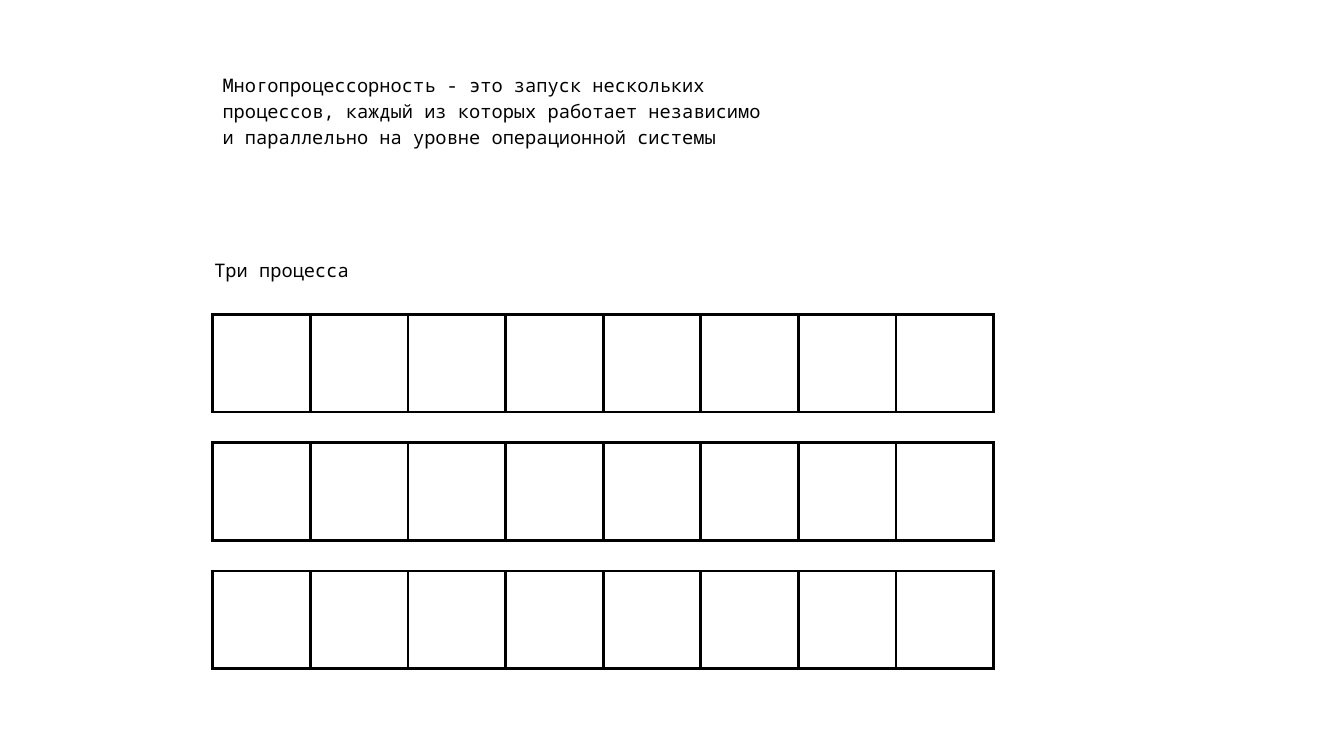
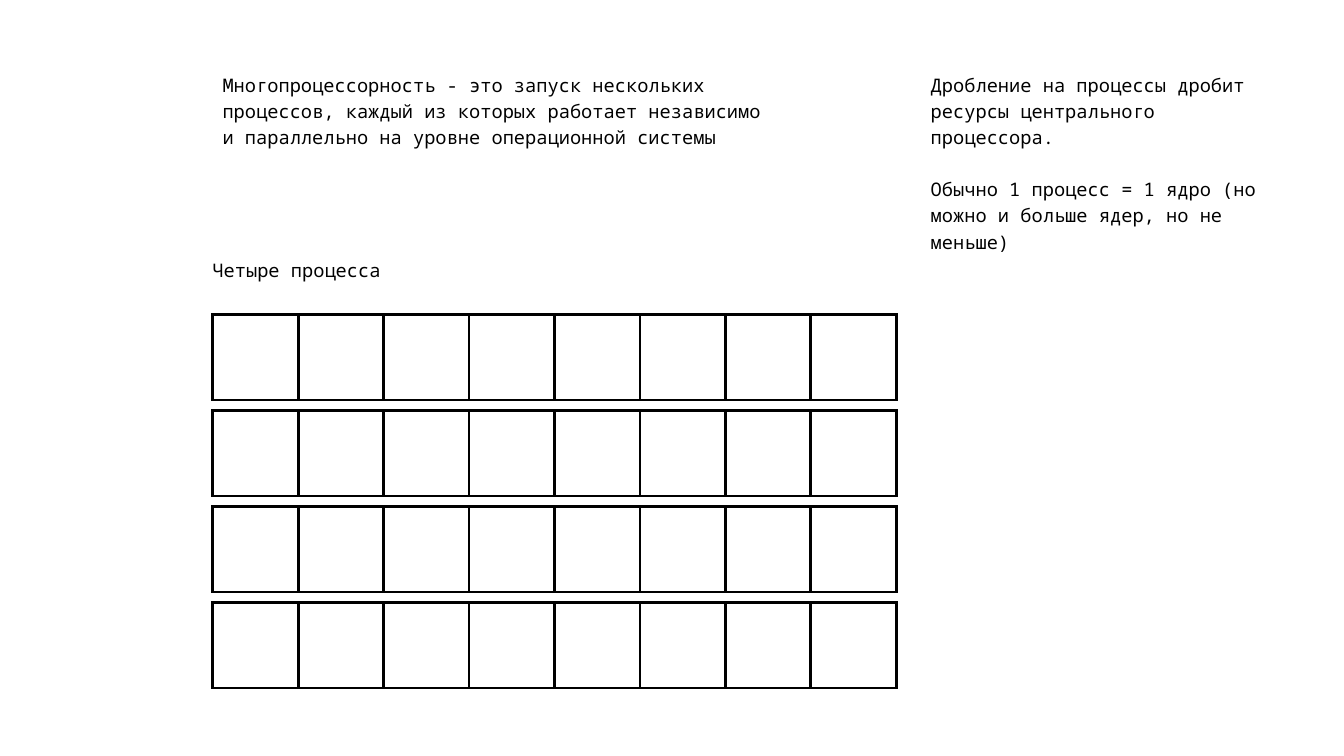
from dataclasses import dataclass
from itertools import product
from typing import Any

from lxml.etree import SubElement
from pptx import Presentation
from pptx.dml.color import RGBColor
from pptx.enum.shapes import MSO_SHAPE
from pptx.enum.text import MSO_ANCHOR, MSO_AUTO_SIZE, PP_ALIGN
from pptx.oxml.ns import qn
from pptx.util import Cm, Pt

BLACK = RGBColor(0x00, 0x00, 0x00)
WHITE = RGBColor(0xFF, 0xFF, 0xFF)

TITLE_ONLY_LAYOUT = 5
CELLS_PER_PROCESS = 8
GRID_LEFT, GRID_TOP = 8.04, 11.89
LINE_HEIGHT = Pt(28)

FRAME_FORMAT = {
    "margin_left": 0,
    "margin_top": 0,
    "margin_right": 0,
    "margin_bottom": 0,
    "word_wrap": True,
    "vertical_anchor": MSO_ANCHOR.TOP,
    "auto_size": MSO_AUTO_SIZE.SHAPE_TO_FIT_TEXT,
}
PARAGRAPH_FORMAT = {"line_spacing": LINE_HEIGHT, "alignment": PP_ALIGN.LEFT}
FONT_FORMAT = {"name": "Noto Sans Mono", "size": Pt(20), "bold": False}


@dataclass(frozen=True)
class TextBlock:
    """Paragraphs and their place in centimetres."""
    left: float
    top: float
    width: float
    height: float
    paragraphs: tuple[str, ...]


@dataclass(frozen=True)
class ProcessGrid:
    """One row of square cells per process, in centimetres."""
    processes: int
    side: float
    row_step: float


@dataclass(frozen=True)
class ProcessSlide:
    grid: ProcessGrid
    texts: tuple[TextBlock, ...]


DEFINITION = TextBlock(8.41, 2.64, 20.37, 3, (
    "Многопроцессорность - это запуск нескольких процессов, каждый из "
    "которых работает независимо и параллельно на уровне операционной системы",
))

SLIDES = (
    ProcessSlide(
        ProcessGrid(processes=3, side=3.69, row_step=4.85),
        (TextBlock(8.1, 9.65, 5.23, 0.94, ("Три процесса",)),),
    ),
    ProcessSlide(
        ProcessGrid(processes=4, side=3.23, row_step=3.63),
        (
            TextBlock(8.03, 9.65, 6.48, 0.94, ("Четыре процесса",)),
            TextBlock(35.18, 2.64, 12.78, 4.95, (
                "Дробление на процессы дробит ресурсы центрального процессора.",
                "Обычно 1 процесс = 1 ядро (но можно и больше ядер, но не меньше)",
            )),
        ),
    ),
)


def apply_format(target: Any, values: dict[str, Any]) -> None:
    for attribute, value in values.items():
        setattr(target, attribute, value)


def write_text(holder: Any, block: TextBlock) -> None:
    apply_format(holder, {
        "left": Cm(block.left),
        "top": Cm(block.top),
        "width": Cm(block.width),
        "height": Cm(block.height),
    })
    frame = holder.text_frame
    apply_format(frame, FRAME_FORMAT)
    for number, wording in enumerate(block.paragraphs):
        paragraph = frame.add_paragraph() if number else frame.paragraphs[0]
        apply_format(paragraph, PARAGRAPH_FORMAT)
        paragraph.space_before = LINE_HEIGHT if number else Pt(0)
        run = paragraph.add_run()
        run.text = wording
        apply_format(run.font, FONT_FORMAT)
        run.font.color.rgb = BLACK


def draw_grid(slide: Any, grid: ProcessGrid) -> None:
    for process, column in product(range(grid.processes), range(CELLS_PER_PROCESS)):
        cell = slide.shapes.add_shape(
            MSO_SHAPE.RECTANGLE,
            Cm(GRID_LEFT + column * grid.side),
            Cm(GRID_TOP + process * grid.row_step),
            Cm(grid.side),
            Cm(grid.side),
        )
        cell.shadow.inherit = False
        cell.fill.solid()
        cell.fill.fore_color.rgb = WHITE
        cell.line.color.rgb = BLACK
        cell.line.width = Pt(3)
        SubElement(cell.line._get_or_add_ln(), qn("a:miter"), lim="800000")


def main() -> None:
    presentation = Presentation()
    presentation.slide_width = Cm(50.8)
    presentation.slide_height = Cm(28.58)
    layout = presentation.slide_layouts[TITLE_ONLY_LAYOUT]
    for content in SLIDES:
        slide = presentation.slides.add_slide(layout)
        write_text(slide.shapes.title, DEFINITION)
        draw_grid(slide, content.grid)
        for block in content.texts:
            write_text(slide.shapes.add_textbox(0, 0, 0, 0), block)
    presentation.save("out.pptx")


if __name__ == "__main__":
    main()
